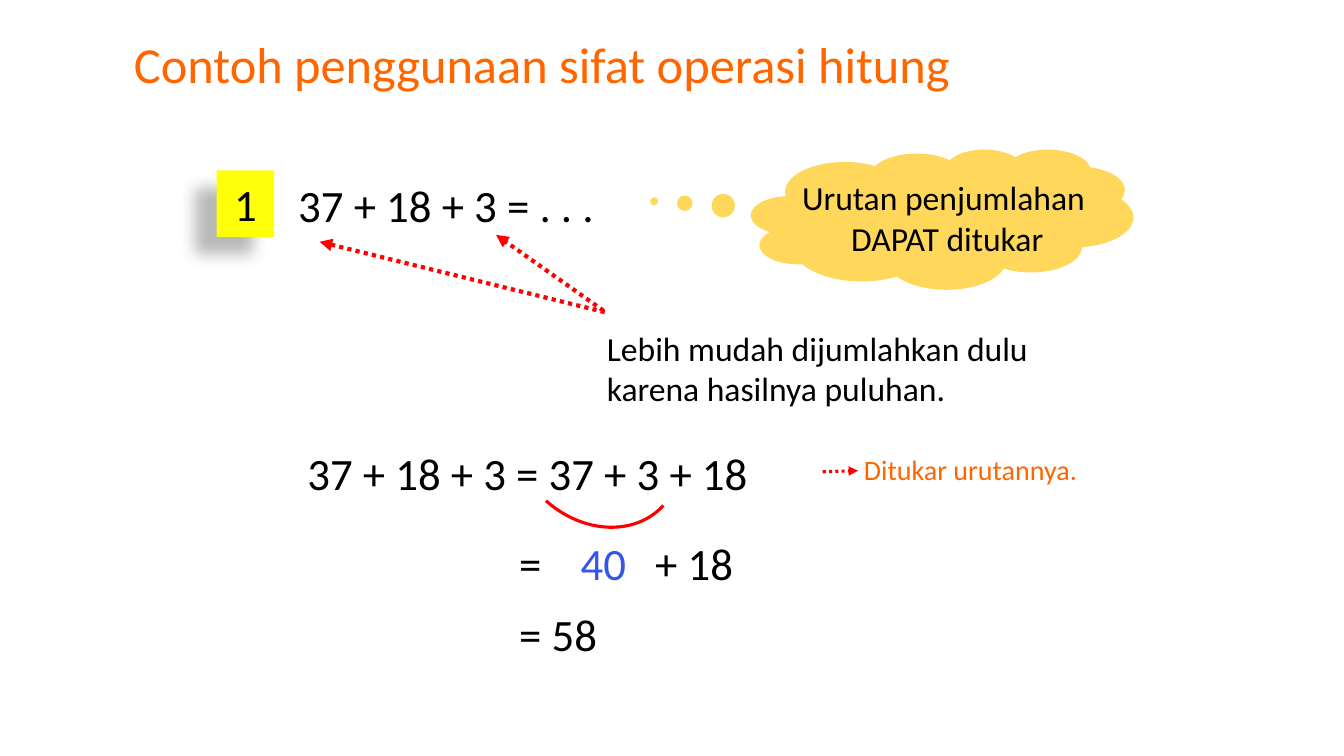
from dataclasses import dataclass

from lxml import etree
from pptx import Presentation
from pptx.dml.color import RGBColor
from pptx.enum.dml import MSO_LINE
from pptx.enum.shapes import MSO_CONNECTOR, MSO_SHAPE
from pptx.enum.text import MSO_ANCHOR, PP_ALIGN
from pptx.oxml.ns import qn
from pptx.util import Inches, Pt

RECT, ARC = MSO_SHAPE.RECTANGLE, MSO_SHAPE.ARC
CLOUD = MSO_SHAPE.CLOUD_CALLOUT
LEFT, CENTER = PP_ALIGN.LEFT, PP_ALIGN.CENTER
MIDDLE = MSO_ANCHOR.MIDDLE
STRAIGHT = MSO_CONNECTOR.STRAIGHT
DOTS = MSO_LINE.ROUND_DOT

FONT = "Calibri"
BLACK, ORANGE, RED = "000000", "FF6600", "FF0000"
YELLOW, GOLD, BLUE = "FFFF09", "FFD85B", "3155ED"


@dataclass
class Label:
    text: str
    x: float
    y: float
    w: float
    h: float
    size: int
    color: str = BLACK
    align: PP_ALIGN = LEFT


LABELS = [
    Label("Contoh penggunaan sifat operasi hitung", 1.23, 0.28, 8.37, 0.71, 36, ORANGE),
    Label("37 + 18 + 3 = . . .", 2.86, 1.71, 3.27, 0.64, 32),
    Label("Lebih mudah dijumlahkan dulu\nkarena hasilnya puluhan.", 5.92, 3.2, 4.42, 0.91, 24),
    Label("37 + 18 + 3 = 37 + 3 + 18", 2.95, 4.37, 4.62, 0.64, 32),
    Label("Ditukar urutannya.", 8.47, 4.44, 2.34, 0.44, 20, ORANGE),
    Label("Urutan penjumlahan \nDAPAT ditukar", 7.84, 1.71, 3.11, 0.91, 24, BLACK, CENTER),
]


def rgb(code: str) -> RGBColor:
    return RGBColor.from_string(code)


def style(run, size: int, color: str) -> None:
    run.font.name = FONT
    run.font.size = Pt(size)
    run.font.color.rgb = rgb(color)


def add_shape(slide, kind, x: float, y: float, w: float, h: float, fill: str = ""):
    """Add a shape with no outline and no shadow, hollow when fill is empty."""
    shape = slide.shapes.add_shape(kind, Inches(x), Inches(y), Inches(w), Inches(h))
    shape.shadow.inherit = False
    if fill:
        shape.fill.solid()
        shape.fill.fore_color.rgb = rgb(fill)
    else:
        shape.fill.background()
    shape.line.fill.background()
    return shape


def add_label(slide, label: Label):
    box = slide.shapes.add_textbox(
        Inches(label.x), Inches(label.y), Inches(label.w), Inches(label.h))
    frame = box.text_frame
    frame.word_wrap = False
    frame.text = label.text
    for para in frame.paragraphs:
        para.alignment = label.align
        for run in para.runs:
            style(run, label.size, label.color)
    return box


def add_badge(slide) -> None:
    """Add the numbered square and the shadow it casts."""
    badge = add_shape(slide, RECT, 2.15, 1.69, 0.57, 0.66, YELLOW)
    frame = badge.text_frame
    frame.vertical_anchor = MIDDLE
    frame.text = "1"
    frame.paragraphs[0].alignment = CENTER
    style(frame.paragraphs[0].runs[0], 32, BLACK)
    effects = badge._element.spPr.find(qn("a:effectLst"))
    shade = etree.SubElement(
        effects, qn("a:outerShdw"), blurRad=str(Pt(11.8)), dist=str(Pt(19.7)),
        dir=str(141 * 60000), algn="ctr", rotWithShape="0")
    color = etree.SubElement(shade, qn("a:srgbClr"), val=BLACK)
    etree.SubElement(color, qn("a:alpha"), val="28000")


def draw_line(shape, width: float, dotted: bool = True, ends: tuple[str, ...] = ()) -> None:
    """Draw the outline in red, with arrowheads at the named ends."""
    shape.line.color.rgb = rgb(RED)
    shape.line.width = Pt(width)
    if dotted:
        shape.line.dash_style = DOTS
    for end in ends:
        etree.SubElement(shape._element.spPr.find(qn("a:ln")), qn(f"a:{end}"), type="triangle")


def add_arrows(slide) -> None:
    """Add the bent double arrow, the short arrow and the arc."""
    start, *rest = [(Inches(x), Inches(y)) for x, y in ((3.17, 2.4), (6.01, 3.1), (4.92, 2.33))]
    path = slide.shapes.build_freeform(*start)
    path.add_line_segments(rest, close=False)
    bend = path.convert_to_shape()
    bend.shadow.inherit = False
    bend.fill.background()
    draw_line(bend, 3, ends=("headEnd", "tailEnd"))

    arrow = slide.shapes.add_connector(
        STRAIGHT, Inches(8.16), Inches(4.68), Inches(8.51), Inches(4.67))
    draw_line(arrow, 2.25, ends=("tailEnd",))
    etree.SubElement(arrow._element.spPr, qn("a:effectLst"))

    arc = add_shape(slide, ARC, 5.17, 3.52, 1.49, 1.79)
    arc.rotation = 132.1
    draw_line(arc, 2.25, dotted=False)


def add_result(slide) -> None:
    """Add the last two steps, with the partial sum set on tab stops."""
    box = add_label(slide, Label("=\n= 58", 5.05, 5.27, 2.38, 1.35, 32))
    box.text_frame.word_wrap = True
    total, answer = box.text_frame.paragraphs
    answer.space_before = Pt(12)
    for text, color in (("\t40", BLUE), ("\t+ 18", BLACK)):
        run = total.add_run()
        run.text = text
        style(run, 32, color)
    tabs = etree.SubElement(total._p.get_or_add_pPr(), qn("a:tabLst"))
    for stop in (0.61, 1.35):
        etree.SubElement(tabs, qn("a:tab"), pos=str(Inches(stop)), algn="l")


def main() -> None:
    deck = Presentation()
    deck.slide_width, deck.slide_height = Inches(13.33), Inches(7.5)
    slide = deck.slides.add_slide(deck.slide_layouts[6])
    add_badge(slide)
    cloud = add_shape(slide, CLOUD, 7.45, 1.48, 3.79, 1.39, GOLD)
    cloud.adjustments[0], cloud.adjustments[1] = -0.754, -0.128
    for label in LABELS:
        add_label(slide, label)
    add_result(slide)
    add_arrows(slide)
    deck.save("out.pptx")


if __name__ == "__main__":
    main()
